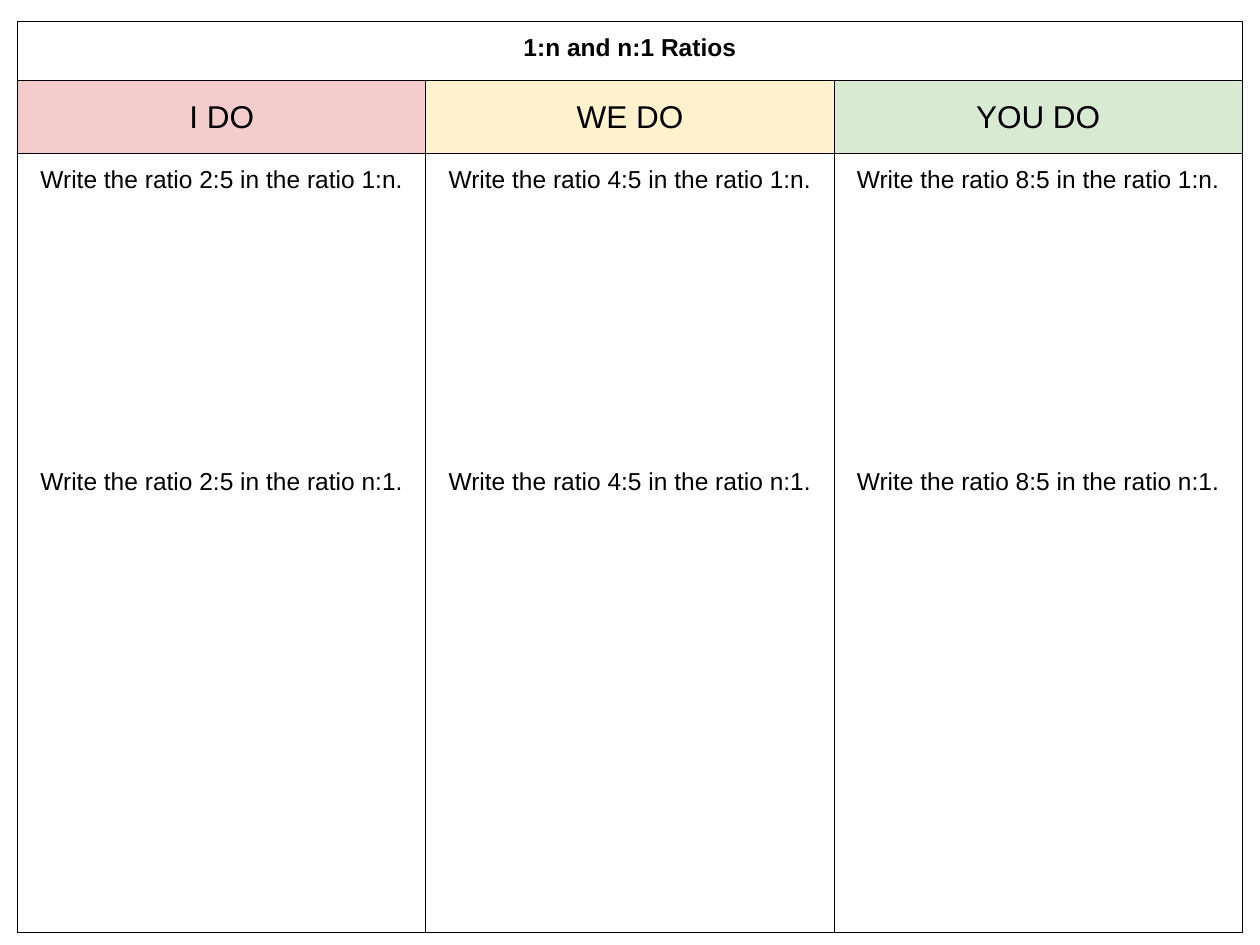
from dataclasses import dataclass
from lxml import etree
from pptx import Presentation
from pptx.dml.color import RGBColor
from pptx.enum.text import MSO_ANCHOR, PP_ALIGN
from pptx.oxml.ns import qn
from pptx.util import Inches, Pt

CENTER = PP_ALIGN.CENTER
TOP = MSO_ANCHOR.TOP
MIDDLE = MSO_ANCHOR.MIDDLE


@dataclass(frozen=True)
class Theme:
    font: str = "Arial"
    ink: str = "000000"
    pink: str = "F4CCCC"
    cream: str = "FFF2CC"
    green: str = "D9EAD3"
    body: float = 14
    head: float = 18
    line: float = 0.75
    gap: float = 157


THEME = Theme()
COLS = (
    ("I DO", THEME.pink, "2:5"),
    ("WE DO", THEME.cream, "4:5"),
    ("YOU DO", THEME.green, "8:5"),
)
FORMS = ("1:n", "n:1")
ROWS = (0.47, 0.58, 6.18)
WIDTH = 3.24


def add_edges(cell):
    props = cell._tc.get_or_add_tcPr()
    for side in ("lnL", "lnR", "lnT", "lnB"):
        line = etree.SubElement(props, qn(f"a:{side}"), w=str(Pt(THEME.line)))
        fill = etree.SubElement(line, qn("a:solidFill"))
        etree.SubElement(fill, qn("a:srgbClr"), val=THEME.ink)


def style_cell(cell, color=None, anchor=TOP):
    add_edges(cell)
    if color:
        cell.fill.solid()
        cell.fill.fore_color.rgb = RGBColor.from_string(color)
    else:
        cell.fill.background()
    cell.vertical_anchor = anchor
    for side in ("left", "right", "top", "bottom"):
        setattr(cell, f"margin_{side}", Inches(0.1))


def write_text(cell, lines, size=THEME.body, bold=False):
    form = {"name": THEME.font, "size": Pt(size), "bold": bold}
    frame = cell.text_frame
    for i, text in enumerate(lines):
        para = frame.add_paragraph() if i else frame.paragraphs[0]
        para.alignment = CENTER
        if i:
            para.space_before = Pt(THEME.gap)
        run = para.add_run()
        run.text = text
        for key, value in form.items():
            setattr(run.font, key, value)
        run.font.color.rgb = RGBColor.from_string(THEME.ink)


def add_grid(slide):
    frame = slide.shapes.add_table(
        len(ROWS), len(COLS), Inches(0.14), Inches(0.17),
        Inches(WIDTH * len(COLS)), Inches(sum(ROWS)))
    table = frame.table
    table.first_row = table.horz_banding = False
    for row, height in zip(table.rows, ROWS):
        row.height = Inches(height)
    for col in table.columns:
        col.width = Inches(WIDTH)
    return table


def fill_title(table, text):
    last = len(COLS) - 1
    table.cell(0, 0).merge(table.cell(0, last))
    for i in range(len(COLS)):
        style_cell(table.cell(0, i))
    write_text(table.cell(0, 0), [text], bold=True)


def fill_col(table, i, head, color, ratio):
    top, task = table.cell(1, i), table.cell(2, i)
    style_cell(top, color, MIDDLE)
    write_text(top, [head], THEME.head)
    style_cell(task)
    write_text(task, [f"Write the ratio {ratio} in the ratio {form}."
                      for form in FORMS])


def main():
    deck = Presentation()
    deck.slide_width, deck.slide_height = Inches(10), Inches(7.5)
    slide = deck.slides.add_slide(deck.slide_layouts[6])
    table = add_grid(slide)
    fill_title(table, "1:n and n:1 Ratios")
    for i, col in enumerate(COLS):
        fill_col(table, i, *col)
    deck.save("out.pptx")


if __name__ == "__main__":
    main()
